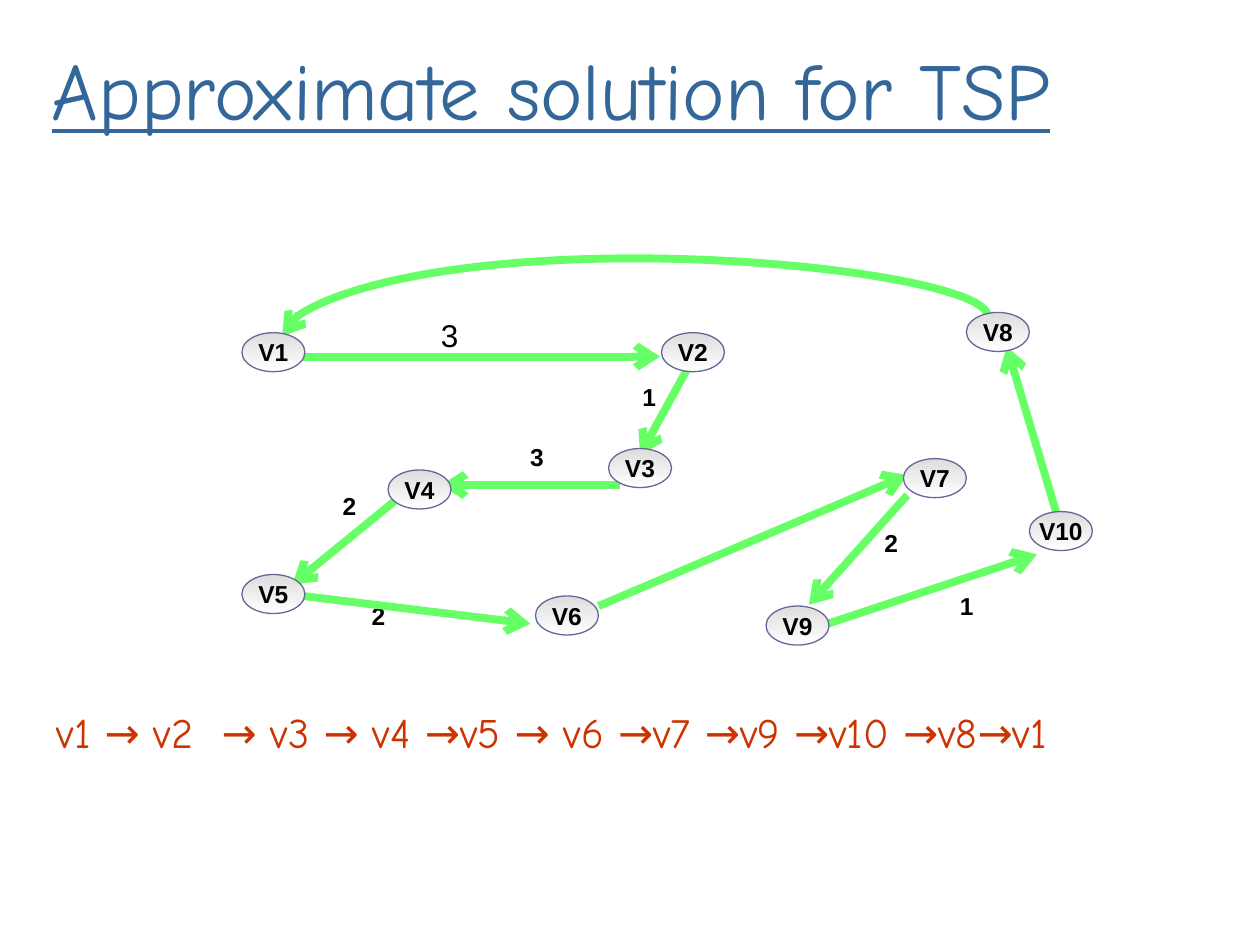
from dataclasses import dataclass
from typing import NamedTuple

import pptx
import pptx.dml.color
import pptx.enum.shapes
import pptx.enum.text
import pptx.oxml
import pptx.oxml.ns
import pptx.util

Inches = pptx.util.Inches
Connector = pptx.enum.shapes.MSO_CONNECTOR
Align = pptx.enum.text.PP_ALIGN
Anchor = pptx.enum.text.MSO_ANCHOR


class TextStyle(NamedTuple):
    size: int
    font: str
    color: str
    bold: bool = False
    underline: bool = False


@dataclass(frozen=True)
class Theme:
    title: TextStyle = TextStyle(46, "Comic Neue", "336699", underline=True)
    tour: TextStyle = TextStyle(24, "Comic Neue", "CC3300")
    node: TextStyle = TextStyle(14, "Arial", "000000", bold=True)
    weight: TextStyle = TextStyle(14, "Arial", "000000", bold=True)
    large_weight: TextStyle = TextStyle(18, "Arial", "000000")
    edge: str = "66FF66"
    edge_width: float = 4.5
    node_line: str = "666699"
    node_line_width: float = 0.75
    node_gradient: tuple[str, str] = ("DDDDDD", "FFFFFF")


THEME = Theme()


class Node(NamedTuple):
    name: str
    left: float
    top: float


class Edge(NamedTuple):
    start: tuple[float, float]
    end: tuple[float, float]


class Weight(NamedTuple):
    text: str
    left: float
    top: float
    style: TextStyle = THEME.weight


NODE_SIZE = (0.5, 0.31)
NODES = [
    Node("V1", 1.92, 2.64), Node("V9", 6.08, 4.81), Node("V8", 7.67, 2.48),
    Node("V3", 4.83, 3.56), Node("V2", 5.25, 2.64), Node("V4", 3.08, 3.73),
    Node("V5", 1.92, 4.56), Node("V6", 4.25, 4.73), Node("V7", 7.17, 3.64),
    Node("V10", 8.17, 4.06),
]
EDGES = [
    Edge((2.4, 2.83), (5.24, 2.83)), Edge((5.47, 2.9), (5.08, 3.61)),
    Edge((4.92, 3.85), (3.5, 3.85)), Edge((3.19, 3.93), (2.32, 4.64)),
    Edge((2.32, 4.72), (4.21, 4.95)), Edge((4.75, 4.81), (7.2, 3.77)),
    Edge((7.2, 3.93), (6.42, 4.8)), Edge((6.57, 4.95), (8.23, 4.4)),
    Edge((8.39, 4.09), (7.99, 2.75)),
]
RETURN_EDGE = Edge((7.84, 2.51), (2.24, 2.67))
RETURN_PEAK = 2.05
WEIGHTS = [
    Weight("1", 7.52, 4.64), Weight("2", 6.92, 4.14), Weight("1", 5, 2.98),
    Weight("2", 2.85, 4.72), Weight("2", 2.62, 3.85), Weight("3", 4.11, 3.46),
    Weight("3", 3.4, 2.46, THEME.large_weight),
]
TOUR = "v1 → v2  → v3 → v4 →v5 → v6 →v7 →v9 →v10 →v8→v1"


def rgb(value: str) -> pptx.dml.color.RGBColor:
    return pptx.dml.color.RGBColor.from_string(value)


def write_text(shape, text: str, style: TextStyle, align=Align.LEFT,
               anchor=Anchor.TOP, wrap: bool = False) -> None:
    frame = shape.text_frame
    frame_format = {"word_wrap": wrap, "vertical_anchor": anchor,
                    "auto_size": pptx.enum.text.MSO_AUTO_SIZE.NONE}
    for name, value in frame_format.items():
        setattr(frame, name, value)
    para = frame.paragraphs[0]
    para.alignment = align
    span = para.add_run()
    span.text = text
    font_format = {"name": style.font, "size": pptx.util.Pt(style.size),
                   "bold": style.bold, "underline": style.underline}
    for name, value in font_format.items():
        setattr(span.font, name, value)
    span.font.color.rgb = rgb(style.color)


def add_text(page, text: str, place: tuple[float, ...], style: TextStyle,
             wrap: bool = False) -> None:
    box = page.shapes.add_textbox(*map(Inches, place))
    write_text(box, text, style, wrap=wrap)


def add_title(page, text: str) -> None:
    title = page.shapes.title
    place = {"left": 0.31, "top": 0.27, "width": 9.36, "height": 0.88}
    for name, value in place.items():
        setattr(title, name, Inches(value))
    write_text(title, text, THEME.title)


def add_edge(page, edge: Edge, kind=Connector.STRAIGHT):
    line = page.shapes.add_connector(kind, *map(Inches, edge.start + edge.end))
    line.line.color.rgb = rgb(THEME.edge)
    line.line.width = pptx.util.Pt(THEME.edge_width)
    properties = line._element.spPr
    arrowhead = pptx.oxml.parse_xml(
        f'<a:tailEnd {pptx.oxml.ns.nsdecls("a")} type="arrow"/>')
    line.line._get_or_add_ln().append(arrowhead)
    properties.append(pptx.oxml.parse_xml(
        f'<a:effectLst {pptx.oxml.ns.nsdecls("a")}/>'))
    return line


def add_arched_edge(page, edge: Edge, peak: float) -> None:
    """Turn a curved connector by 270 degrees so that it bulges up to peak."""
    (start_x, start_y), (end_x, end_y) = edge
    middle_x, middle_y = (start_x + end_x) / 2, (start_y + end_y) / 2
    half_width, half_height = (end_y - start_y) / 2, (start_x - end_x) / 2
    unturned = Edge((middle_x + half_width, middle_y + half_height),
                    (middle_x - half_width, middle_y - half_height))
    line = add_edge(page, unturned, Connector.CURVE)
    properties = line._element.spPr
    properties.find(pptx.oxml.ns.qn("a:xfrm")).set("rot", str(270 * 60000))
    bulge = round((peak - start_y) / (end_y - start_y) * 100000)
    geometry = properties.find(pptx.oxml.ns.qn("a:prstGeom"))
    for child in list(geometry):
        geometry.remove(child)
    geometry.append(pptx.oxml.parse_xml(
        f'<a:avLst {pptx.oxml.ns.nsdecls("a")}>'
        f'<a:gd name="adj1" fmla="val {bulge}"/></a:avLst>'))


def add_node(page, node: Node) -> None:
    shape = page.shapes.add_shape(
        pptx.enum.shapes.MSO_SHAPE.FLOWCHART_CONNECTOR,
        *map(Inches, (node.left, node.top, *NODE_SIZE)))
    shape.shadow.inherit = False
    shape.fill.gradient()
    shape.fill.gradient_angle = 270
    for stop, color, position in zip(shape.fill.gradient_stops,
                                     THEME.node_gradient, (0, 1)):
        stop.color.rgb = rgb(color)
        stop.position = position
    shape.line.color.rgb = rgb(THEME.node_line)
    shape.line.width = pptx.util.Pt(THEME.node_line_width)
    write_text(shape, node.name, THEME.node, Align.CENTER, Anchor.MIDDLE)


def main() -> None:
    deck = pptx.Presentation()
    deck.slide_width, deck.slide_height = Inches(10), Inches(7.5)
    page = deck.slides.add_slide(deck.slide_layouts.get_by_name("Title Only"))
    add_title(page, "Approximate solution for TSP")
    for weight in WEIGHTS:
        add_text(page, weight.text, (weight.left, weight.top, 0.31, 0.33),
                 weight.style)
    for edge in EDGES:
        add_edge(page, edge)
    add_arched_edge(page, RETURN_EDGE, RETURN_PEAK)
    add_text(page, TOUR, (0.35, 5.56, 9.45, 0.84), THEME.tour, wrap=True)
    for node in NODES:
        add_node(page, node)
    deck.save("out.pptx")


if __name__ == "__main__":
    main()
